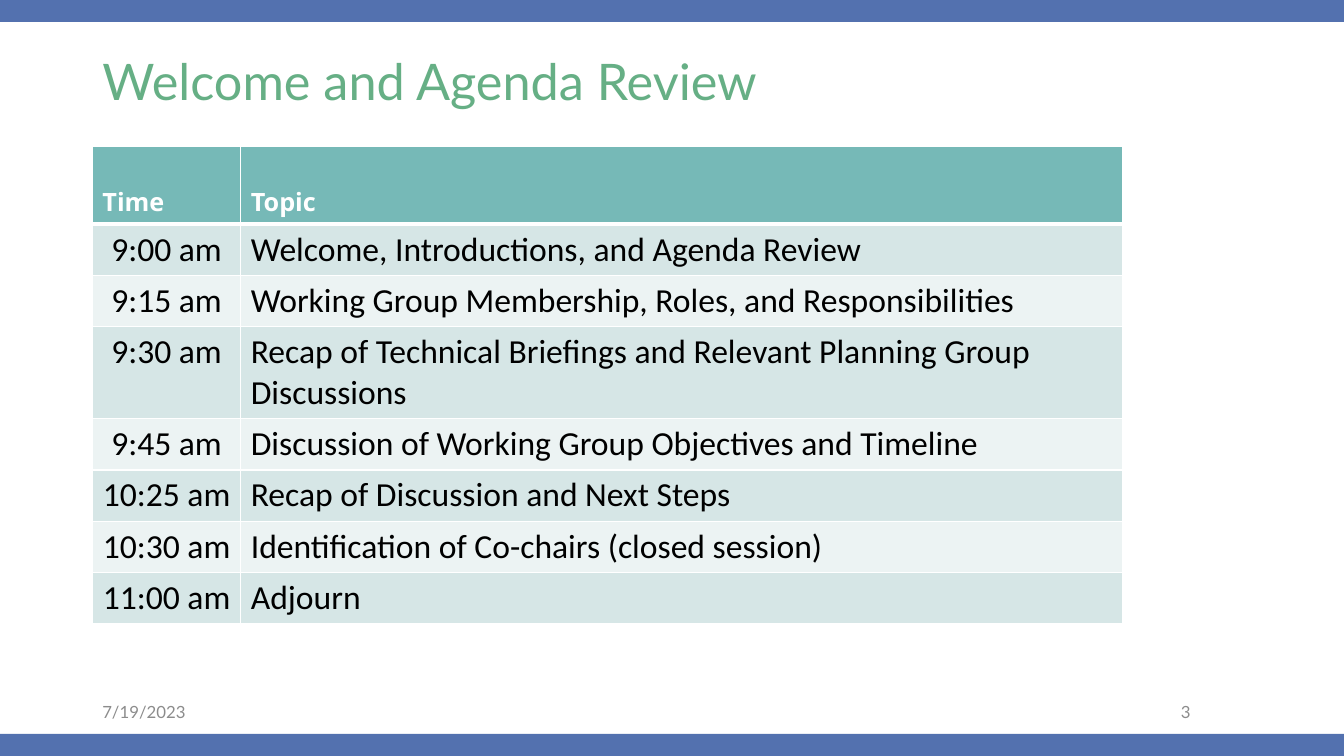
from lxml import etree
from pptx import Presentation
from pptx.dml.color import RGBColor
from pptx.enum.shapes import MSO_SHAPE
from pptx.enum.text import MSO_ANCHOR, MSO_AUTO_SIZE, PP_ALIGN
from pptx.oxml.ns import qn
from pptx.util import Pt

TITLE = "Welcome and Agenda Review"
HEADER = ("Time", "Topic")
AGENDA = [
    ("9:00 am", "Welcome, Introductions, and Agenda Review"),
    ("9:15 am", "Working Group Membership, Roles, and Responsibilities"),
    ("9:30 am", "Recap of Technical Briefings and Relevant Planning Group Discussions"),
    ("9:45 am", "Discussion of Working Group Objectives and Timeline"),
    ("10:25 am", "Recap of Discussion and Next Steps"),
    ("10:30 am", "Identification of Co-chairs (closed session)"),
    ("11:00 am", "Adjourn"),
]
DATE, PAGE = "7/19/2023", "3"

BLUE = RGBColor(0x53, 0x71, 0xAF)
GREEN = RGBColor(0x66, 0xAF, 0x85)
TEAL = RGBColor(0x76, 0xB9, 0xB7)
BANDS = (RGBColor(0xD6, 0xE6, 0xE6), RGBColor(0xEC, 0xF3, 0xF3))
GREY = RGBColor(0x8C, 0x8C, 0x8C)
WHITE = RGBColor(0xFF, 0xFF, 0xFF)
BLACK = RGBColor(0, 0, 0)

LEFT, CENTER, RIGHT = PP_ALIGN.LEFT, PP_ALIGN.CENTER, PP_ALIGN.RIGHT
TOP, MIDDLE, BOTTOM = MSO_ANCHOR.TOP, MSO_ANCHOR.MIDDLE, MSO_ANCHOR.BOTTOM

SLIDE_W, SLIDE_H, BAR_H = 960, 540, 15.75
MARGIN = 66
COLS = (106, 630)
HEADER_H, ROW_H, LINE_H = 55.7, 36.6, 29.3
TWO_LINE_ROW = 3


def add_text(tf, text, font, size, color, align=LEFT, bold=False):
    p = tf.paragraphs[0]
    p.alignment = align
    r = p.add_run()
    r.text = text
    r.font.name = font
    r.font.size = Pt(size)
    r.font.bold = bold
    r.font.color.rgb = color
    return p


def add_borders(cell, bottom):
    tcPr = cell._tc.get_or_add_tcPr()
    for side, width in (("L", 1), ("R", 1), ("T", 1), ("B", bottom)):
        ln = etree.SubElement(tcPr, qn(f"a:ln{side}"), w=str(Pt(width)))
        fill = etree.SubElement(ln, qn("a:solidFill"))
        etree.SubElement(fill, qn("a:srgbClr"), val=str(WHITE))


def add_footer(s, text, left, width, align):
    tf = s.shapes.add_textbox(Pt(left), Pt(494), Pt(width), Pt(28.75)).text_frame
    tf.word_wrap = True
    tf.vertical_anchor = MIDDLE
    add_text(tf, text, "Lato", 12, GREY, align)


def add_agenda(s):
    rows = [HEADER] + AGENDA
    heights = [HEADER_H] + [ROW_H] * len(AGENDA)
    heights[TWO_LINE_ROW] += LINE_H
    table = s.shapes.add_table(len(rows), len(COLS), Pt(MARGIN), Pt(104.4),
                               Pt(sum(COLS)), Pt(sum(heights))).table
    for column, width in zip(table.columns, COLS):
        column.width = Pt(width)
    for i, (row, height) in enumerate(zip(rows, heights)):
        table.rows[i].height = Pt(height)
        for j, text in enumerate(row):
            cell = table.cell(i, j)
            add_borders(cell, 3 if i == 0 else 1)
            cell.fill.solid()
            if i == 0:
                cell.fill.fore_color.rgb = TEAL
                cell.vertical_anchor = BOTTOM
                add_text(cell.text_frame, text, "Open Sans", 18, WHITE, bold=True)
            else:
                cell.fill.fore_color.rgb = BANDS[(i - 1) % 2]
                cell.vertical_anchor = TOP
                add_text(cell.text_frame, text, "Calibri", 24, BLACK,
                         CENTER if j == 0 else LEFT)


def main():
    prs = Presentation()
    prs.slide_width, prs.slide_height = Pt(SLIDE_W), Pt(SLIDE_H)
    s = prs.slides.add_slide(prs.slide_layouts[5])

    for top in (SLIDE_H - BAR_H, 0):
        bar = s.shapes.add_shape(MSO_SHAPE.RECTANGLE, 0, Pt(top), Pt(SLIDE_W), Pt(BAR_H))
        bar.shadow.inherit = False
        bar.fill.solid()
        bar.fill.fore_color.rgb = BLUE
        bar.line.fill.background()

    title = s.shapes.title
    title.left, title.top = Pt(MARGIN), Pt(BAR_H)
    title.width, title.height = Pt(828), Pt(88.5)
    tf = title.text_frame
    tf.auto_size = MSO_AUTO_SIZE.NONE
    tf.vertical_anchor = MIDDLE
    add_text(tf, TITLE, "Lato", 36, GREEN).line_spacing = 0.9

    add_agenda(s)
    add_footer(s, DATE, MARGIN, 216, LEFT)
    add_footer(s, PAGE, 678, 179.5, RIGHT)
    prs.save("out.pptx")


if __name__ == "__main__":
    main()
